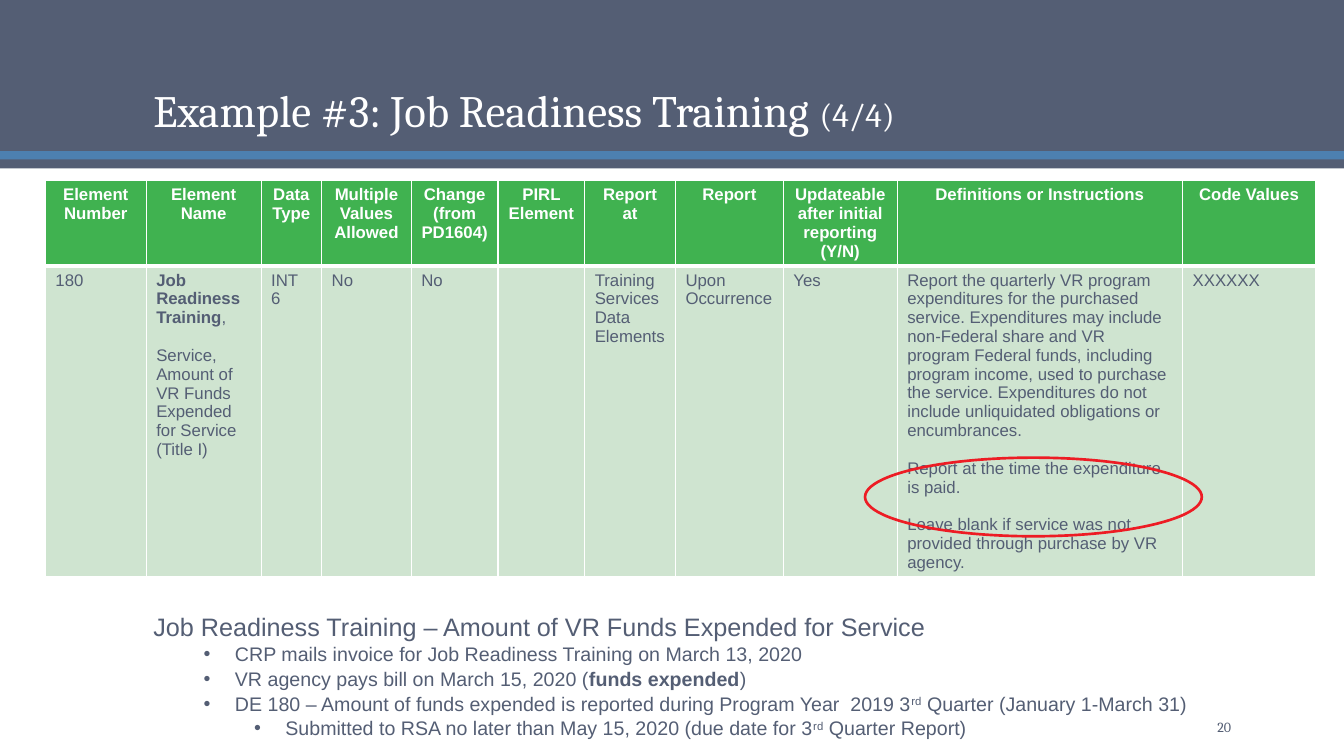
from pptx import Presentation
from pptx.dml.color import RGBColor
from pptx.enum.shapes import MSO_SHAPE
from pptx.enum.text import MSO_ANCHOR, MSO_AUTO_SIZE, PP_ALIGN
from pptx.oxml.ns import qn
from pptx.util import Inches, Pt
from lxml.etree import SubElement

WHITE = RGBColor(0xFF, 0xFF, 0xFF)
SLATE = RGBColor(0x54, 0x5E, 0x74)
BLUE = RGBColor(0x4D, 0x80, 0xB0)
GREEN = RGBColor(0x40, 0xB2, 0x50)
PALE_GREEN = RGBColor(0xCF, 0xE4, 0xD0)
RED = RGBColor(0xED, 0x1C, 0x24)

HEADERS = ["Element Number", "Element Name", "Data Type", "Multiple Values Allowed",
           "Change (from PD1604)", "PIRL Element", "Report at", "Report",
           "Updateable after initial reporting (Y/N)", "Definitions or Instructions",
           "Code Values"]
COLUMN_WIDTHS = [1, 1.14, 0.6, 0.89, 0.86, 0.86, 0.9, 1.07, 1.13, 2.83, 1.32]
ROW_HEIGHTS = [0.8, 1.73]

# A cell is a list of paragraphs: (gap before in points, runs).
# A run is plain text, or (text, "bold" or "super").
ELEMENT_NAME = [
    (0, [("Job Readiness Training", "bold"), ","]),
    (13.5, ["Service,"]),
    (0, ["Amount of VR Funds Expended for Service"]),
    (0, ["(Title I)"]),
]
DEFINITION = [
    (0, ["Report the quarterly VR program expenditures for the purchased service. "
         "Expenditures may include non-Federal share and VR program Federal funds, "
         "including program income, used to purchase the service. Expenditures do not "
         "include unliquidated obligations or encumbrances."]),
    (13.5, ["Report at the time the expenditure is paid."]),
    (13.5, ["Leave blank if service was not provided through purchase by VR agency."]),
]
ELEMENT_180 = ["180", ELEMENT_NAME, "INT 6", "No", "No", "", "Training Services Data Elements",
               "Upon Occurrence", "Yes", DEFINITION, "XXXXXX"]

# (level, runs)
TIMELINE = [
    (0, ["Job Readiness Training – Amount of VR Funds Expended for Service"]),
    (1, ["CRP mails invoice for Job Readiness Training on March 13, 2020"]),
    (1, ["VR agency pays bill on March 15, 2020 (", ("funds expended", "bold"), ")"]),
    (1, ["DE 180 – Amount of funds expended is reported during Program Year  2019 3",
         ("rd", "super"), " Quarter (January 1-March 31)"]),
    (2, ["Submitted to RSA no later than May 15, 2020 (due date for 3",
         ("rd", "super"), " Quarter Report)"]),
]


class SlideBuilder:
    heading_font = "Cambria"
    body_font = "Arial"

    def __init__(self, slide):
        self.slide = slide
        self.shapes = slide.shapes

    def add_runs(self, paragraph, runs, size, color, font=None, bold=False):
        for piece in runs:
            text, style = (piece, "") if isinstance(piece, str) else piece
            run = paragraph.add_run()
            run.text = text
            run.font.name = font or self.body_font
            run.font.size = Pt(size)
            run.font.color.rgb = color
            run.font.bold = bold or style == "bold"
            if style == "super":
                run._r.get_or_add_rPr().set("baseline", "30000")

    def place(self, shape, left, top, width, height):
        """Move a placeholder and bring it in front of what is drawn so far."""
        shape.left, shape.top = Inches(left), Inches(top)
        shape.width, shape.height = Inches(width), Inches(height)
        self.shapes._spTree.append(shape._element)

    def band(self, top, height, color):
        band = self.shapes.add_shape(MSO_SHAPE.RECTANGLE, 0, Inches(top),
                                     Inches(13.33), Inches(height))
        band.shadow.inherit = False
        band.fill.solid()
        band.fill.fore_color.rgb = color
        band.line.fill.background()

    def title(self, text, counter):
        title = self.shapes.title
        self.place(title, 1.42, 0.28, 10.5, 1.13)
        frame = title.text_frame
        frame.auto_size = MSO_AUTO_SIZE.NONE
        frame.vertical_anchor = MSO_ANCHOR.BOTTOM
        heading = frame.paragraphs[0]
        heading.alignment = PP_ALIGN.LEFT
        heading.line_spacing = 0.9
        self.add_runs(heading, [text], 32, WHITE, self.heading_font)
        self.add_runs(heading, [counter], 24, WHITE, self.heading_font)

    def cell(self, cell, content, fill, color, header):
        paragraphs = [(0, [content])] if isinstance(content, str) else content
        frame = cell.text_frame
        for index, (gap, runs) in enumerate(paragraphs):
            paragraph = frame.paragraphs[0] if index == 0 else frame.add_paragraph()
            paragraph.alignment = PP_ALIGN.CENTER if header else PP_ALIGN.LEFT
            if gap:
                paragraph.space_before = Pt(gap)
            self.add_runs(paragraph, runs, 12, color, bold=header)
        properties = cell._tc.get_or_add_tcPr()
        for side in ("lnL", "lnR", "lnT", "lnB"):
            width = 3 if header and side == "lnB" else 1
            border = SubElement(properties, qn(f"a:{side}"), w=str(Pt(width)))
            SubElement(SubElement(border, qn("a:solidFill")), qn("a:srgbClr"), val=str(WHITE))
        cell.fill.solid()
        cell.fill.fore_color.rgb = fill

    def table(self, header, record):
        table_frame = self.shapes.add_table(2, len(header), Inches(0.45), Inches(1.79),
                                            Inches(12.6), Inches(4.2))
        table = table_frame.table
        table.horz_banding = False
        for column, width in zip(table.columns, COLUMN_WIDTHS):
            column.width = Inches(width)
        for row, height in zip(table.rows, ROW_HEIGHTS):
            row.height = Inches(height)
        for index, (label, value) in enumerate(zip(header, record)):
            self.cell(table.cell(0, index), label, GREEN, WHITE, True)
            self.cell(table.cell(1, index), value, PALE_GREEN, SLATE, False)

    def highlight(self, left, top, width, height):
        ring = self.shapes.add_shape(MSO_SHAPE.OVAL, Inches(left), Inches(top),
                                     Inches(width), Inches(height))
        ring.shadow.inherit = False
        ring.fill.background()
        ring.line.color.rgb = RED
        ring.line.width = Pt(1.89)

    def outline(self, items):
        body = self.slide.placeholders[1]
        self.place(body, 1.42, 6.01, 11.16, 1.35)
        frame = body.text_frame
        frame.auto_size = MSO_AUTO_SIZE.SHAPE_TO_FIT_TEXT
        for index, (level, runs) in enumerate(items):
            paragraph = frame.paragraphs[0] if index == 0 else frame.add_paragraph()
            paragraph.level = level
            paragraph.space_before = Pt(0)
            paragraph.line_spacing = 1.05 if level else 1.0
            properties = paragraph._p.get_or_add_pPr()
            properties.set("marL", str(Inches(0.31 + 0.5 * level) if level else 0))
            properties.set("indent", str(Inches(-0.31) if level else 0))
            if level:
                SubElement(properties, qn("a:buFont"), typeface=self.body_font)
                SubElement(properties, qn("a:buChar"), char="•")
            else:
                SubElement(properties, qn("a:buNone"))
            self.add_runs(paragraph, runs, 14 if level else 18, SLATE)

    def page_number(self, number):
        box = self.shapes.add_textbox(Inches(10.81), Inches(7.06), Inches(1.5), Inches(0.3))
        frame = box.text_frame
        frame.word_wrap = True
        frame.vertical_anchor = MSO_ANCHOR.MIDDLE
        frame.paragraphs[0].alignment = PP_ALIGN.RIGHT
        self.add_runs(frame.paragraphs[0], [number], 10, SLATE, self.heading_font)


def main():
    presentation = Presentation()
    presentation.slide_width = Inches(13.33)
    presentation.slide_height = Inches(7.5)
    builder = SlideBuilder(presentation.slides.add_slide(presentation.slide_layouts[1]))
    for top, height, color in [(0, 1.5, SLATE), (1.5, 0.09, BLUE), (1.58, 0.09, SLATE)]:
        builder.band(top, height, color)
    builder.title("Example #3: Job Readiness Training ", "(4/4)")
    builder.table(HEADERS, ELEMENT_180)
    builder.highlight(8.58, 4.54, 3.34, 0.78)
    builder.outline(TIMELINE)
    builder.page_number("20")
    presentation.save("out.pptx")


if __name__ == "__main__":
    main()
